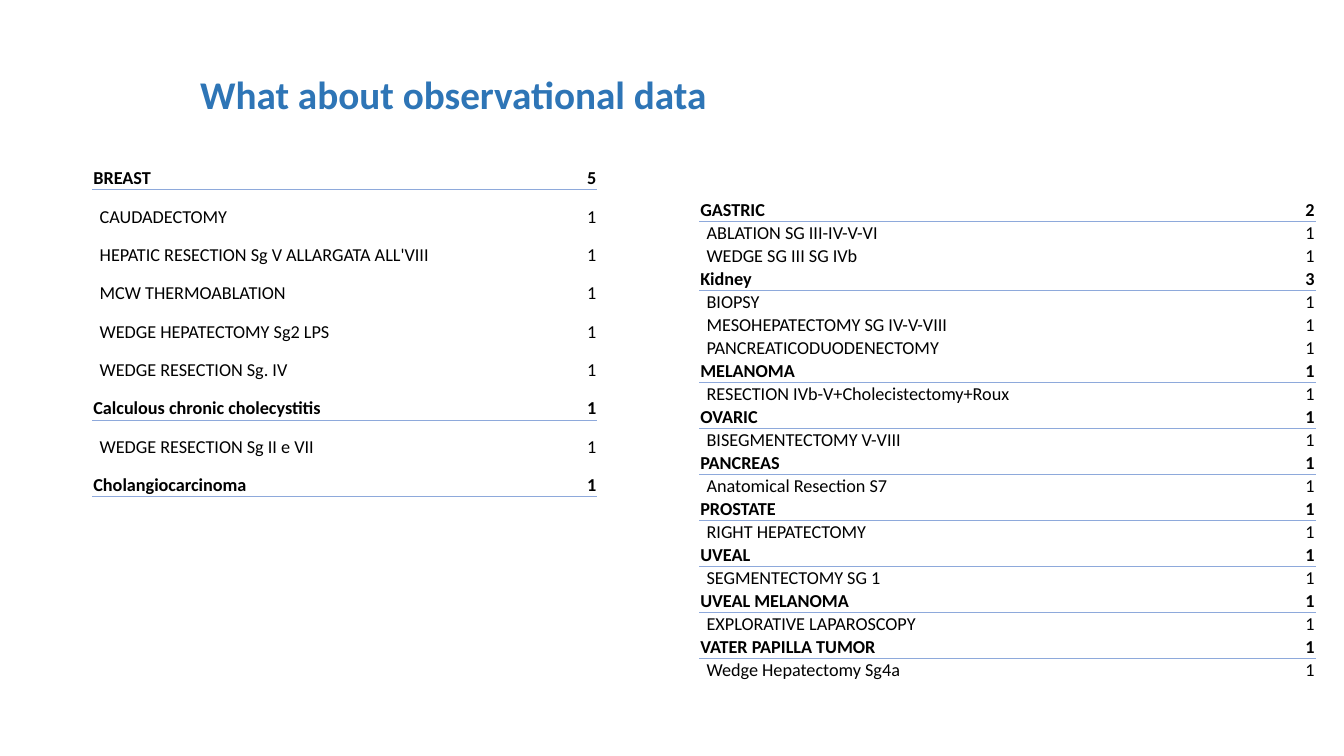
import dataclasses
import typing

import lxml.etree
import pptx
import pptx.dml.color
import pptx.enum.text
import pptx.oxml
import pptx.oxml.ns
import pptx.util

PX = 9525
FONT = "Calibri"
RULE = "8EA9DB"
NO_STYLE = "{2D5ABB26-0587-4C30-8999-92F81FD0307C}"
ALIGN = pptx.enum.text.PP_ALIGN
ANCHOR = pptx.enum.text.MSO_ANCHOR


@dataclasses.dataclass(frozen=True)
class Group:
    tumor: str
    total: int
    procedures: tuple[str, ...] = ()


@dataclasses.dataclass(frozen=True)
class CaseTable:
    left: int
    top: int
    height: int
    widths: tuple[int, int]
    groups: tuple[Group, ...]


CASE_TABLES = (
    CaseTable(666, 189, 460, (526, 61), (
        Group("GASTRIC", 2, ("ABLATION SG III-IV-V-VI", "WEDGE SG III SG IVb")),
        Group("Kidney", 3, ("BIOPSY", "MESOHEPATECTOMY SG IV-V-VIII",
                            "PANCREATICODUODENECTOMY")),
        Group("MELANOMA", 1, ("RESECTION IVb-V+Cholecistectomy+Roux",)),
        Group("OVARIC", 1, ("BISEGMENTECTOMY V-VIII",)),
        Group("PANCREAS", 1, ("Anatomical Resection S7",)),
        Group("PROSTATE", 1, ("RIGHT HEPATECTOMY",)),
        Group("UVEAL", 1, ("SEGMENTECTOMY SG 1",)),
        Group("UVEAL MELANOMA", 1, ("EXPLORATIVE LAPAROSCOPY",)),
        Group("VATER PAPILLA TUMOR", 1, ("Wedge Hepatectomy Sg4a",)),
    )),
    CaseTable(88, 144, 329, (431, 50), (
        Group("BREAST", 5, ("CAUDADECTOMY",
                            "HEPATIC RESECTION Sg V ALLARGATA ALL'VIII",
                            "MCW THERMOABLATION", "WEDGE HEPATECTOMY Sg2 LPS",
                            "WEDGE RESECTION Sg. IV")),
        Group("Calculous chronic cholecystitis", 1,
              ("WEDGE RESECTION Sg II e VII",)),
        Group("Cholangiocarcinoma", 1),
    )),
)


def px(n: int) -> pptx.util.Emu:
    return pptx.util.Emu(n * PX)


def color(value: str) -> pptx.dml.color.RGBColor:
    return pptx.dml.color.RGBColor.from_string(value)


def write(tf: typing.Any, text: str, *, size: int = 13, bold: bool = False,
          fill: str = "000000", align: ALIGN = ALIGN.LEFT) -> None:
    p = tf.paragraphs[0]
    p.alignment = align
    r = p.add_run()
    r.text = text
    r.font.name = FONT
    r.font.size = pptx.util.Pt(size)
    r.font.bold = bold
    r.font.color.rgb = color(fill)


def underline(cell: typing.Any) -> None:
    ln = pptx.oxml.parse_xml(
        f'<a:lnB {pptx.oxml.ns.nsdecls("a")} w="{pptx.util.Pt(0.5)}"><a:solidFill>'
        f'<a:srgbClr val="{RULE}"/></a:solidFill></a:lnB>')
    cell._tc.get_or_add_tcPr().insert(0, ln)


def fill_cell(cell: typing.Any, text: str, header: bool, indent: int,
              align: ALIGN) -> None:
    cell.fill.background()
    cell.vertical_anchor = ANCHOR.BOTTOM
    cell.margin_left, cell.margin_right = px(indent), px(1)
    cell.margin_top = cell.margin_bottom = 0
    write(cell.text_frame, text, bold=header, align=align)
    if header:
        underline(cell)


def add_case_table(s: typing.Any, spec: CaseTable) -> None:
    rows = []
    for group in spec.groups:
        rows.append((group.tumor, group.total, True))
        rows += [(name, 1, False) for name in group.procedures]
    table = s.shapes.add_table(len(rows), 2, px(spec.left), px(spec.top),
                               px(sum(spec.widths)), px(spec.height)).table
    table.first_row = table.horz_banding = False
    table._tbl.tblPr.find(pptx.oxml.ns.qn("a:tableStyleId")).text = NO_STYLE
    for column, width in zip(table.columns, spec.widths):
        column.width = px(width)
    for i, (name, count, header) in enumerate(rows):
        fill_cell(table.cell(i, 0), name, header, 1 if header else 7, ALIGN.LEFT)
        fill_cell(table.cell(i, 1), str(count), header, 1, ALIGN.RIGHT)


def add_title(s: typing.Any, text: str) -> None:
    sp = s.shapes.title
    sp.left, sp.top, sp.width, sp.height = px(181), px(62), px(565), px(55)
    tf = sp.text_frame
    tf.word_wrap = True
    tf.auto_size = pptx.enum.text.MSO_AUTO_SIZE.SHAPE_TO_FIT_TEXT
    tf.vertical_anchor = ANCHOR.TOP
    write(tf, text, size=28, bold=True, fill="2E75B6")


def main() -> None:
    """Build the slide of observational case counts by tumor and procedure."""
    prs = pptx.Presentation()
    prs.slide_width, prs.slide_height = px(1280), px(720)
    s = prs.slides.add_slide(prs.slide_layouts.get_by_name("Title Only"))
    for spec in CASE_TABLES:
        add_case_table(s, spec)
    add_title(s, "What about observational data")
    prs.save("out.pptx")


if __name__ == "__main__":
    main()
